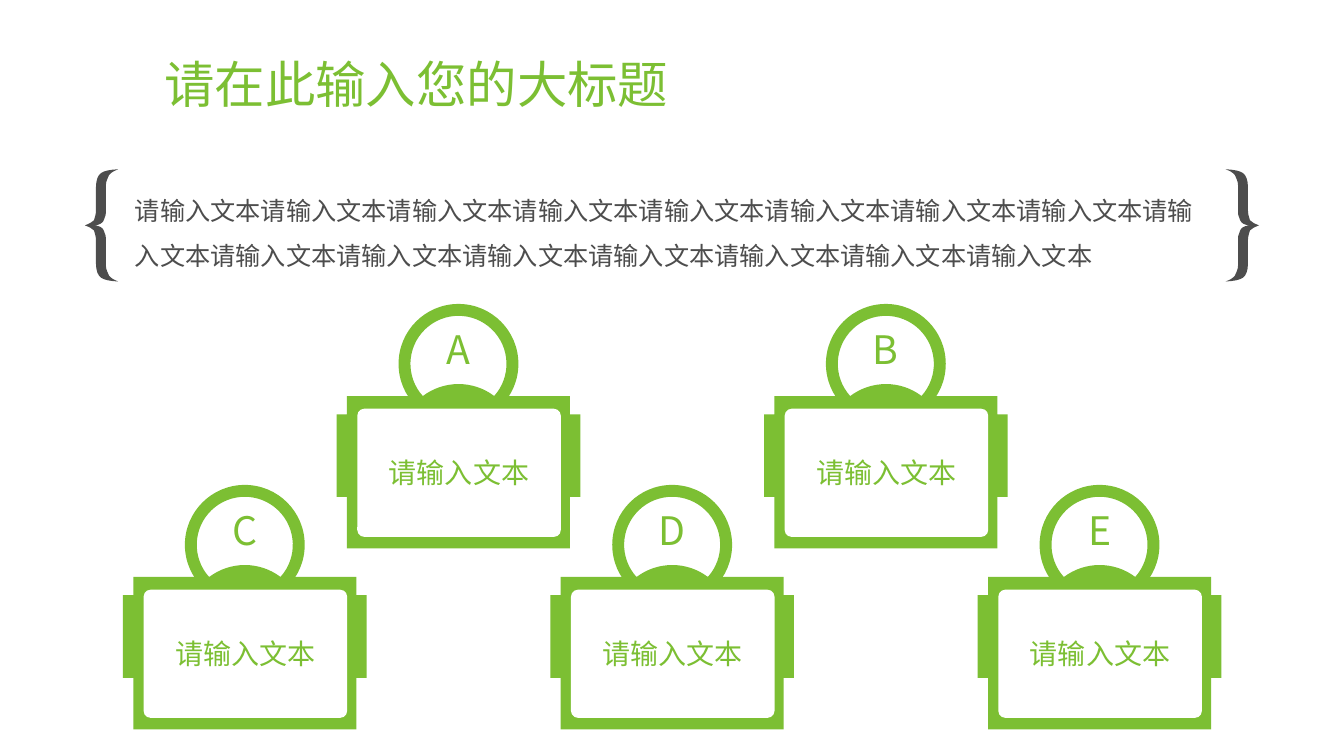
from dataclasses import dataclass
from math import cos, radians, sin, tan

from lxml import etree
from pptx import Presentation
from pptx import util as u
from pptx.dml.color import RGBColor
from pptx.enum import shapes, text
from pptx.oxml.ns import qn

GREEN, GREY, WHITE = "7CBF33", "4D4D4D", "FFFFFF"
FONT = "Noto Sans CJK SC"
LABEL = "请输入文本"
Point = tuple[float, float]

FIRST_X, STEP_X = 6.17, 5.385
TOP_Y, LOW_Y = 9.17, 13.73
RING, HOLE, CURVE = 1.51, 1.21, 1.49  # radii of the head's arcs


@dataclass
class Desk:
    name: str
    col: int
    y: float

    @property
    def x(self) -> float:
        return FIRST_X + STEP_X * self.col


DESKS = [
    Desk("C", 0, LOW_Y),
    Desk("D", 2, LOW_Y),
    Desk("E", 4, LOW_Y),
    Desk("A", 1, TOP_Y),
    Desk("B", 3, TOP_Y),
]

# Upper half of a brace: its tip, then two control points and an end point a row
BRACE = [
    (0, 0),
    (0.13, -0.05), (0.18, -0.08), (0.23, -0.13),
    (0.25, -0.2), (0.28, -0.28), (0.28, -0.38),
    (0.28, -0.38), (0.28, -0.97), (0.28, -0.97),
    (0.28, -1.14), (0.33, -1.27), (0.41, -1.32),
    (0.48, -1.37), (0.64, -1.41), (0.84, -1.41),
    (0.74, -1.38), (0.66, -1.33), (0.61, -1.27),
    (0.58, -1.19), (0.53, -1.12), (0.53, -1.02),
    (0.53, -1.02), (0.53, -0.42), (0.53, -0.42),
    (0.53, -0.3), (0.53, -0.22), (0.48, -0.14),
    (0.46, -0.06), (0.36, -0.01), (0.25, 0),
]

# Right half of a desk's frame, from the top down, relative to the head's centre
FRAME = [(2.81, 0.81), (2.81, 1.27), (3.07, 1.27),
         (3.07, 3.35), (2.81, 3.35), (2.81, 4.65)]


def color(code: str) -> RGBColor:
    return RGBColor.from_string(code)


def arc(radius: float, start: float, end: float, count: int,
        drop: float = 0) -> list[Point]:
    """Cubic curve points of an arc; degrees run clockwise from the right."""
    turn = radians(end - start) / count
    pull = 4 / 3 * tan(turn / 4)
    dots = [(radius * cos(radians(start)), drop + radius * sin(radians(start)))]
    for i in range(count):
        a = radians(start) + turn * i
        b = a + turn
        for p, q in ((cos(a) - pull * sin(a), sin(a) + pull * cos(a)),
                     (cos(b) + pull * sin(b), sin(b) - pull * cos(b)),
                     (cos(b), sin(b))):
            dots.append((radius * p, drop + radius * q))
    return dots


def paint(shape, fill: str) -> None:
    shape.shadow.inherit = False
    shape.fill.solid()
    shape.fill.fore_color.rgb = color(fill)
    shape.line.fill.background()


def soften(shape) -> None:
    """Turn every three line segments into one cubic curve."""
    lines = list(shape._element.iter(qn("a:lnTo")))
    for first, *rest in zip(lines[::3], lines[1::3], lines[2::3]):
        curve = etree.Element(qn("a:cubicBezTo"))
        first.addprevious(curve)
        for line in (first, *rest):
            curve.append(line[0])
            line.getparent().remove(line)


def trace(slide, x: float, y: float, loops: list[list[Point]], fill: str):
    """Draw closed outlines placed around the point x, y."""
    rings = [[(u.Cm(x + a), u.Cm(y + b)) for a, b in loop] for loop in loops]
    pen = slide.shapes.build_freeform(*rings[0][0], scale=1.0)
    for i, ring in enumerate(rings):
        if i:
            pen.move_to(*ring[0])
        pen.add_line_segments(ring[1:], close=True)
    shape = pen.convert_to_shape()
    paint(shape, fill)
    return shape


def write(shape, words: str, size: int, ink: str, space: float = 1.0,
          align=text.PP_ALIGN.CENTER) -> None:
    frame = shape.text_frame
    frame.word_wrap = True
    frame.vertical_anchor = text.MSO_ANCHOR.MIDDLE
    para = frame.paragraphs[0]
    para.text = words
    para.alignment = align
    para.line_spacing = space
    para.font.size = u.Pt(size)
    para.font.name = FONT
    para.font.color.rgb = color(ink)


def add_text(slide, x: float, y: float, wide: float, high: float, words: str,
             size: int, ink: str, space: float) -> None:
    box = slide.shapes.add_textbox(u.Cm(x), u.Cm(y), u.Cm(wide), u.Cm(high))
    write(box, words, size, ink, space, text.PP_ALIGN.LEFT)


def add_brace(slide, x: float, y: float, side: int) -> None:
    """Side 1 opens to the right, -1 to the left."""
    loop = BRACE + [(a, -b) for a, b in BRACE[-2::-1]]
    soften(trace(slide, x, y, [[(side * a, b) for a, b in loop]], GREY))


def add_desk(slide, desk: Desk) -> None:
    hole = arc(HOLE, 138, 402, 3) + arc(CURVE, -52.6, -127.4, 1, 2)[1:]
    head = trace(slide, desk.x, desk.y, [hole, arc(RING, 0, 360, 4)], GREEN)
    soften(head)
    head.text_frame.margin_bottom = u.Cm(0.89)
    write(head, desk.name, 28, GREEN)

    left = [(-a, b) for a, b in reversed(FRAME)]
    trace(slide, desk.x, desk.y, [FRAME + left], GREEN)

    board = slide.shapes.add_shape(
        shapes.MSO_SHAPE.ROUNDED_RECTANGLE, u.Cm(desk.x - 2.55),
        u.Cm(desk.y + 1.13), u.Cm(5.13), u.Cm(3.23))
    board.adjustments[0] = 0.055
    paint(board, WHITE)
    write(board, LABEL, 20, GREEN)


def main() -> None:
    deck = Presentation()
    deck.slide_width, deck.slide_height = u.Cm(33.87), u.Cm(19.05)
    slide = deck.slides.add_slide(deck.slide_layouts[6])
    add_text(slide, 3.89, 1.02, 26.92, 2.36, "请在此输入您的大标题", 36, GREEN, 0.9)
    add_text(slide, 3.15, 3.99, 27.56, 3.38, LABEL * 16, 18, GREY, 1.5)
    add_brace(slide, 2.14, 5.68, 1)
    add_brace(slide, 31.73, 5.68, -1)
    for desk in DESKS:
        add_desk(slide, desk)
    deck.save("out.pptx")


if __name__ == "__main__":
    main()
